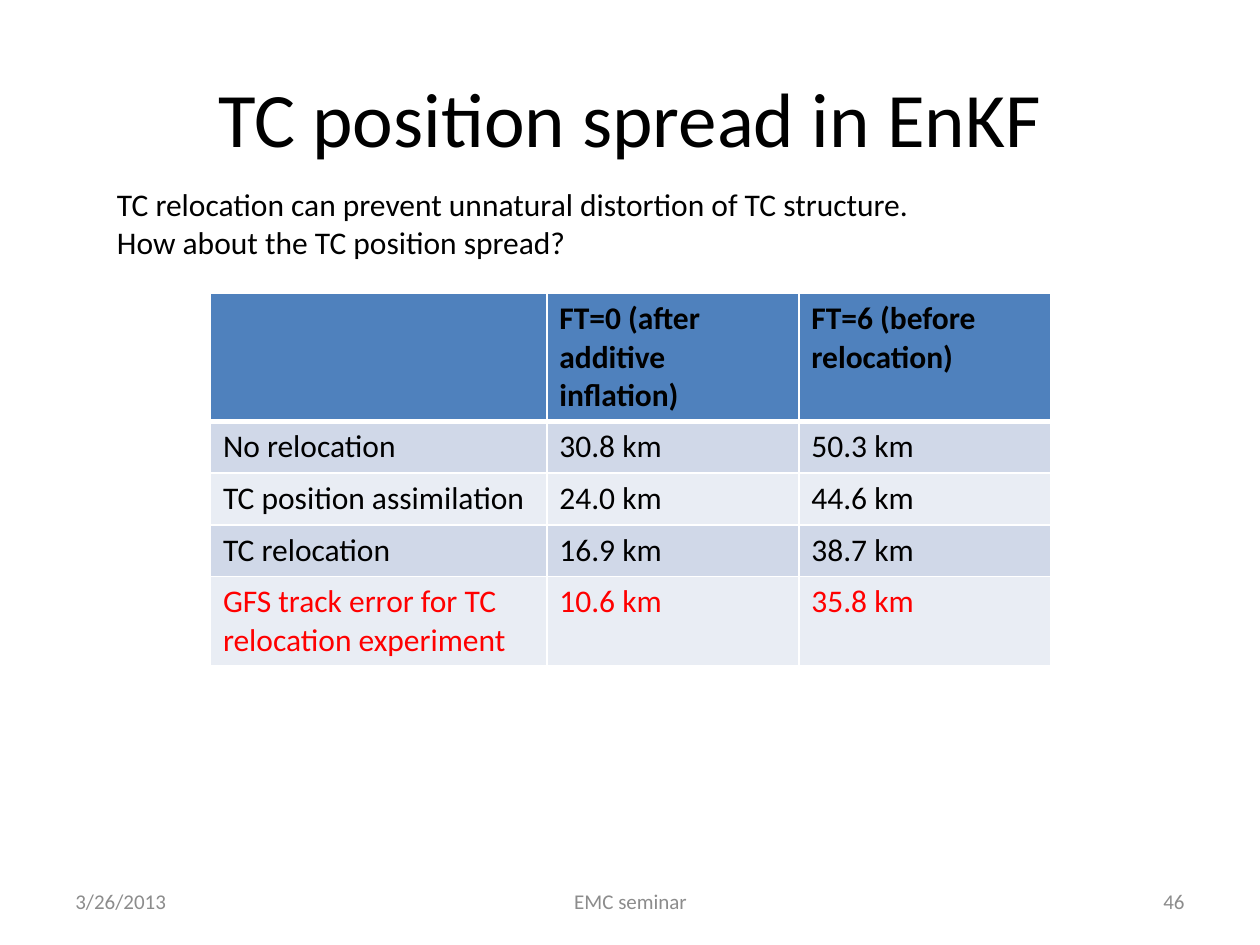
"""Builds a slide on TC position spread in EnKF, with a comparison table."""
import pptx
import pptx.dml.color
import pptx.enum.text
import pptx.oxml
import pptx.oxml.ns
import pptx.util

Inches = pptx.util.Inches
ALIGN = pptx.enum.text.PP_ALIGN
MIDDLE = pptx.enum.text.MSO_ANCHOR.MIDDLE


def style(p, size, color, bold=False, align=ALIGN.LEFT):
    p.alignment = align
    p.font.name = "Calibri"
    p.font.size = pptx.util.Pt(size)
    p.font.bold = bold
    p.font.color.rgb = pptx.dml.color.RGBColor.from_string(color)


def border(cell, side, width):
    cell._tc.get_or_add_tcPr().append(pptx.oxml.parse_xml(
        f'<a:{side} {pptx.oxml.ns.nsdecls("a")} w="{pptx.util.Pt(width)}">'
        f'<a:solidFill><a:srgbClr val="FFFFFF"/></a:solidFill></a:{side}>'))


prs = pptx.Presentation()
prs.slide_width, prs.slide_height = Inches(10), Inches(7.5)
s = prs.slides.add_slide(prs.slide_layouts[5])

title = s.shapes.title
title.left, title.top = Inches(0.5), Inches(0.3)
title.width, title.height = Inches(9), Inches(1.25)
title.text_frame.text = "TC position spread in EnKF"
title.text_frame.vertical_anchor = MIDDLE
style(title.text_frame.paragraphs[0], 44, "000000", align=ALIGN.CENTER)

rows = [
    ("", "FT=0 (after additive inflation)", "FT=6 (before relocation)"),
    ("No relocation", "30.8 km", "50.3 km"),
    ("TC position assimilation", "24.0 km", "44.6 km"),
    ("TC relocation", "16.9 km", "38.7 km"),
    ("GFS track error for TC relocation experiment", "10.6 km", "35.8 km"),
]
fills = ["4F81BD", "D0D8E8", "E9EDF4", "D0D8E8", "E9EDF4"]
colors = ["000000"] * 4 + ["FF0000"]
table = s.shapes.add_table(len(rows), 3, Inches(1.67), Inches(2.33),
                           Inches(6.67), Inches(2.05)).table
for column, width in zip(table.columns, (2.67, 2, 2)):
    column.width = Inches(width)
for i, row in enumerate(rows):
    table.rows[i].height = Inches(0.41)
    for j, text in enumerate(row):
        cell = table.cell(i, j)
        cell.text = text
        style(cell.text_frame.paragraphs[0], 18, colors[i], bold=i == 0)
        for side, width in (("lnL", 1), ("lnR", 1), ("lnT", 3 if i == 1 else 1),
                            ("lnB", 3 if i == 0 else 1)):
            border(cell, side, width)
        cell.fill.solid()
        cell.fill.fore_color.rgb = pptx.dml.color.RGBColor.from_string(fills[i])

intro = s.shapes.add_textbox(Inches(0.83), Inches(1.42), Inches(8.75), Inches(0.71))
tf = intro.text_frame
tf.word_wrap = True
tf.auto_size = pptx.enum.text.MSO_AUTO_SIZE.SHAPE_TO_FIT_TEXT
tf.text = ("TC relocation can prevent unnatural distortion of TC structure.\n"
           "How about the TC position spread?")
for p in tf.paragraphs:
    style(p, 18, "000000")

for text, left, width, align in (
    ("3/26/2013", 0.5, 2.33, ALIGN.LEFT),
    ("46", 7.17, 2.33, ALIGN.RIGHT),
    ("EMC seminar", 3.42, 3.17, ALIGN.CENTER),
):
    sp = s.shapes.add_textbox(Inches(left), Inches(6.95), Inches(width), Inches(0.4))
    tf = sp.text_frame
    tf.word_wrap = True
    tf.vertical_anchor = MIDDLE
    tf.text = text
    style(tf.paragraphs[0], 12, "8C8C8C", align=align)

prs.save("out.pptx")
